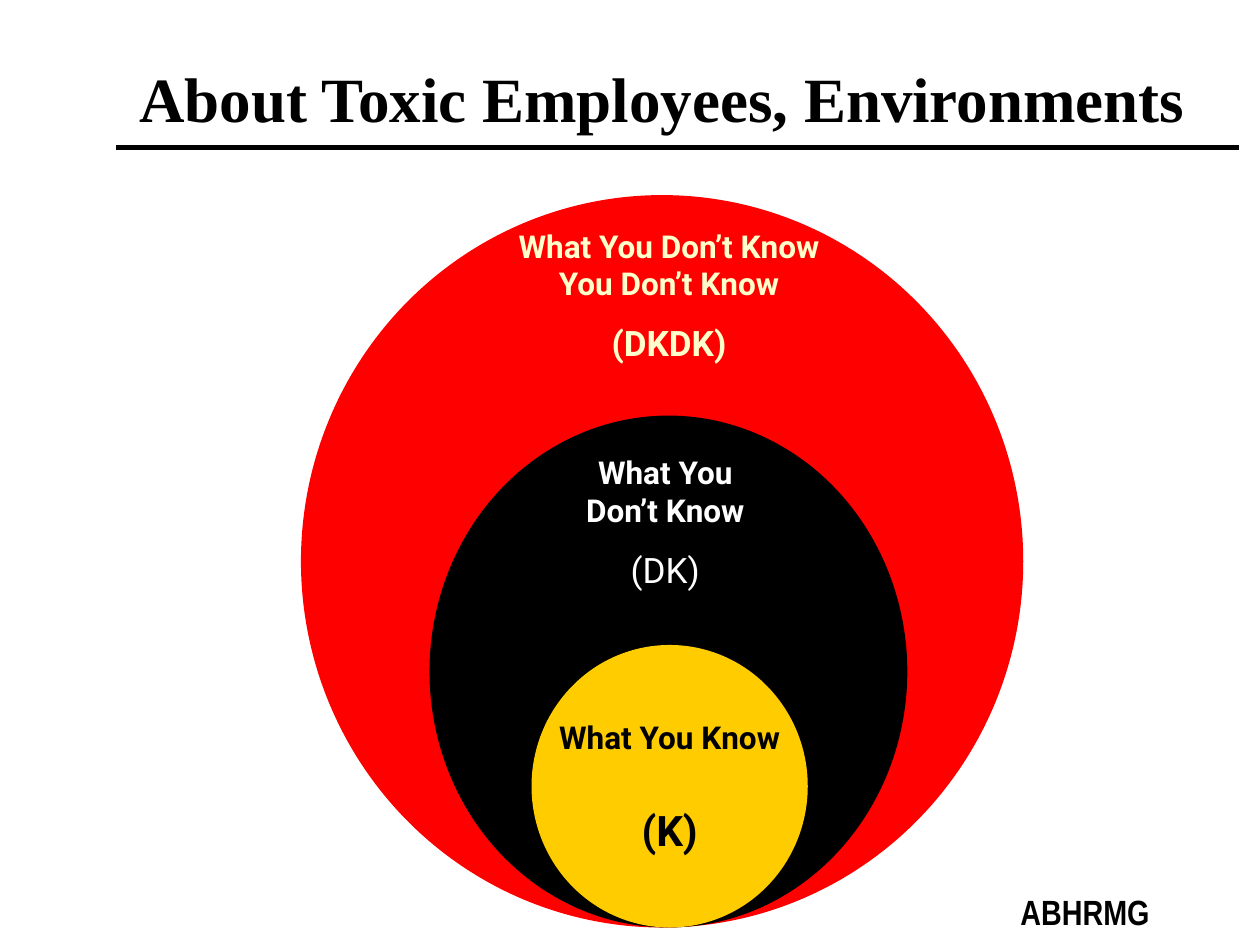
from lxml import etree
from pptx import Presentation
from pptx.dml.color import RGBColor
from pptx.enum.shapes import MSO_CONNECTOR, MSO_SHAPE
from pptx.enum.text import MSO_ANCHOR, PP_ALIGN
from pptx.oxml.ns import qn
from pptx.util import Pt

PX = 9144
OVAL = MSO_SHAPE.OVAL
STRAIGHT = MSO_CONNECTOR.STRAIGHT
TOP, MIDDLE = MSO_ANCHOR.TOP, MSO_ANCHOR.MIDDLE
LEFT, CENTER = PP_ALIGN.LEFT, PP_ALIGN.CENTER
BLACK, WHITE, RED, GOLD, CREAM = "000000", "FFFFFF", "FF0000", "FFCC00", "FFFFCC"


def emu(*lengths):
    return [n * PX for n in lengths]


def rgb(value):
    return RGBColor.from_string(value)


def write(tf, lines, font, color, align=CENTER, anchor=TOP, gap=0, wrap=True):
    tf.word_wrap = wrap
    tf.vertical_anchor = anchor
    for i, (text, size, bold) in enumerate(lines):
        p = tf.add_paragraph() if i else tf.paragraphs[0]
        p.text = text
        p.alignment = align
        if i:
            p.space_before = Pt(gap)
        p.font.name = font
        p.font.size = Pt(size)
        p.font.bold = bold
        p.font.color.rgb = rgb(color)


def add_text(s, box, lines, font, color, **options):
    sp = s.shapes.add_textbox(*emu(*box))
    write(sp.text_frame, lines, font, color, **options)


def add_circle(s, box, color):
    sp = s.shapes.add_shape(OVAL, *emu(*box))
    sp.shadow.inherit = False
    sp.fill.solid()
    sp.fill.fore_color.rgb = rgb(color)
    sp.line.color.rgb = rgb(color)
    sp.line.width = Pt(4.5)
    return sp


def add_header(s, x, y, w, h):
    rule = s.shapes.add_connector(STRAIGHT, *emu(x + 25, y + 87, x + w - 1, y + 87))
    rule.line.color.rgb = rgb(BLACK)
    rule.line.width = Pt(3)
    etree.SubElement(rule._element.spPr, qn("a:effectLst"))
    add_text(s, (x, y, w, h), [("About Toxic Employees, Environments", 36, True)],
             "Times New Roman", BLACK, anchor=MIDDLE)


def add_knowledge_circles(s, x, y, w, h):
    add_circle(s, (x, y, w, h), RED)
    add_circle(s, (x + 102, y + h - 400, 373, 400), BLACK)
    add_text(s, (x + 150, y + 17, 278, 150),
             [("What You Don’t Know You Don’t Know", 18, True), ("(DKDK)", 20, True)],
             "Roboto", CREAM, gap=11)
    add_text(s, (x + 200, y + 197, 172, 120),
             [("What You Don’t Know", 18, True), ("(DK)", 20, False)],
             "Roboto", WHITE, gap=11)
    known = add_circle(s, (x + 183, y + h - 218, 213, 218), GOLD)
    write(known.text_frame, [("What You Know", 18, True), ("(K)", 24, True)],
          "Roboto", BLACK, anchor=MIDDLE, gap=28, wrap=False)


def add_footer(s, x, y, w, h):
    add_text(s, (x, y, w, h), [("ABHRMG", 20, True)], "Arial Narrow", BLACK, align=LEFT)


def main():
    prs = Presentation()
    prs.slide_width, prs.slide_height = emu(1000, 750)
    s = prs.slides.add_slide(prs.slide_layouts[6])
    s.background.fill.solid()
    s.background.fill.fore_color.rgb = rgb(WHITE)
    add_header(s, 67, 30, 917, 95)
    add_knowledge_circles(s, 242, 158, 567, 575)
    add_footer(s, 800, 702, 175, 44)
    prs.save("out.pptx")


if __name__ == "__main__":
    main()
